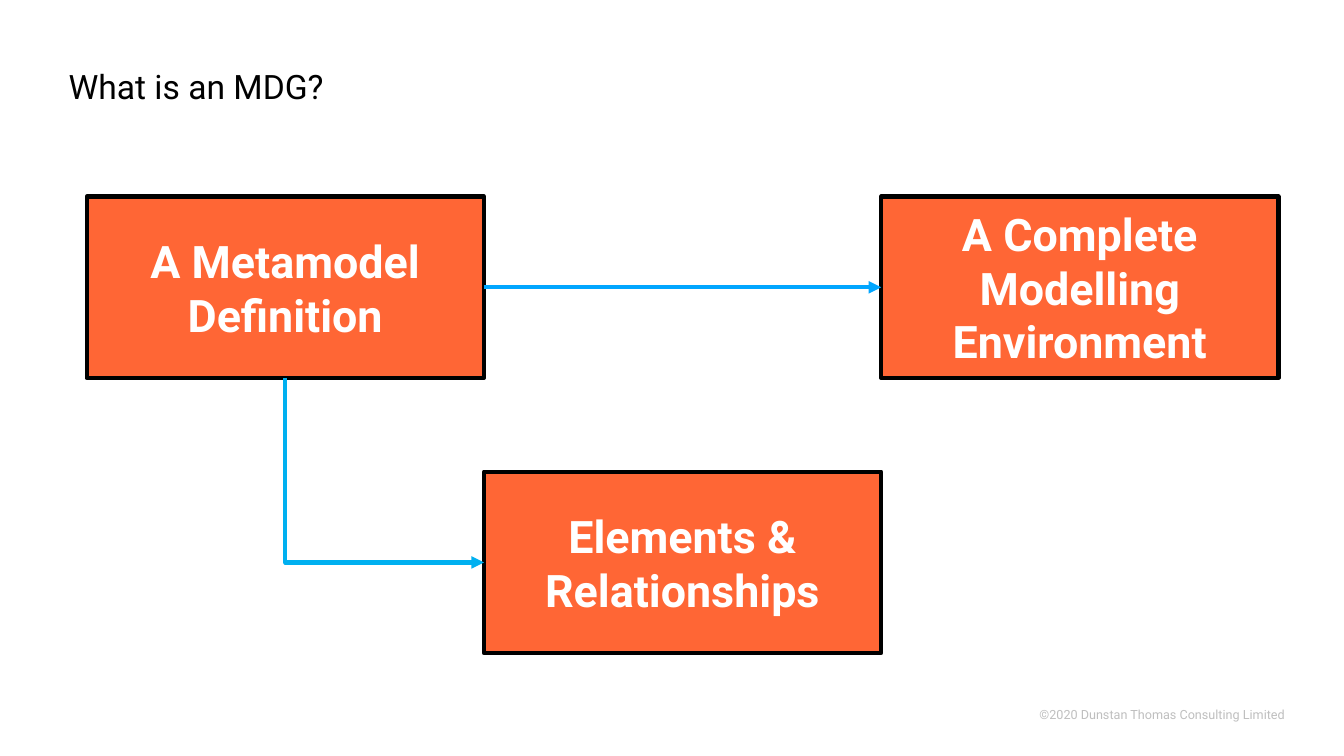
from pptx import Presentation
from pptx.dml.color import RGBColor
from pptx.enum.shapes import MSO_CONNECTOR, MSO_SHAPE
from pptx.enum.text import MSO_ANCHOR, MSO_AUTO_SIZE, PP_ALIGN
from pptx.oxml.ns import qn
from pptx.util import Inches, Pt
from lxml.etree import SubElement

BLACK = RGBColor(0x00, 0x00, 0x00)
WHITE = RGBColor(0xFF, 0xFF, 0xFF)
GREY = RGBColor(0xBF, 0xBF, 0xBF)
ORANGE = RGBColor(0xFF, 0x66, 0x35)
CYAN = RGBColor(0x00, 0xB0, 0xF0)
BLUE = RGBColor(0x01, 0xA6, 0xFF)

WIDE, HIGH = 3.94, 1.8
LEFT, TOP, LOW = 0.86, 1.95, 4.68


def write(frame, text, size, color, align, bold=False):
    frame.text = text
    frame.word_wrap = True
    line = frame.paragraphs[0]
    line.alignment = align
    font = line.runs[0].font
    font.name = "Roboto"
    font.size = Pt(size)
    font.bold = bold
    font.color.rgb = color


def join(kind, start, site, end, color):
    link = slide.shapes.add_connector(kind, 0, 0, 0, 0)
    link.begin_connect(start, site)
    link.end_connect(end, 1)
    link.line.color.rgb = color
    link.line.width = Pt(3)
    props = link._element.spPr
    SubElement(props.find(qn("a:ln")), qn("a:tailEnd"), type="triangle")
    SubElement(props, qn("a:effectLst"))
    return link


deck = Presentation()
deck.slide_width = Inches(13.33)
deck.slide_height = Inches(7.5)
slide = deck.slides.add_slide(deck.slide_layouts[5])

title = slide.shapes.title
title.left, title.top = Inches(0.58), Inches(0.62)
title.width, title.height = Inches(12.06), Inches(0.51)
write(title.text_frame, "What is an MDG?", 24, BLACK, PP_ALIGN.LEFT)
title.text_frame.auto_size = MSO_AUTO_SIZE.NONE
title.text_frame.vertical_anchor = MSO_ANCHOR.MIDDLE
title.text_frame.paragraphs[0].line_spacing = 0.9

foot = slide.shapes.add_textbox(Inches(7.75), Inches(6.96), Inches(4.99), Inches(0.25))
foot.text_frame.margin_left = foot.text_frame.margin_right = 0
write(foot.text_frame, "©2020 Dunstan Thomas Consulting Limited", 9, GREY, PP_ALIGN.RIGHT)

boxes = []
for col, (text, top) in enumerate([
    ("A Metamodel Definition", TOP),
    ("Elements & Relationships", LOW),
    ("A Complete Modelling Environment", TOP),
]):
    box = slide.shapes.add_shape(
        MSO_SHAPE.RECTANGLE, Inches(LEFT + col * WIDE), Inches(top), Inches(WIDE), Inches(HIGH)
    )
    box.shadow.inherit = False
    box.fill.solid()
    box.fill.fore_color.rgb = ORANGE
    box.line.color.rgb = BLACK
    box.line.width = Pt(3)
    box.text_frame.vertical_anchor = MSO_ANCHOR.MIDDLE
    write(box.text_frame, text, 32, WHITE, PP_ALIGN.CENTER, True)
    boxes.append(box)

model, parts, whole = boxes
join(MSO_CONNECTOR.STRAIGHT, model, 3, whole, BLUE)

bend = join(MSO_CONNECTOR.ELBOW, model, 2, parts, CYAN)
bend.left, bend.top = Inches(2.9), Inches(3.68)
bend.width, bend.height = Inches(1.83), Inches(1.97)
props = bend._element.spPr
props.find(qn("a:prstGeom")).set("prst", "bentConnector2")
frame = props.find(qn("a:xfrm"))
frame.set("rot", "16200000")
frame.set("flipH", "1")

deck.save("out.pptx")
